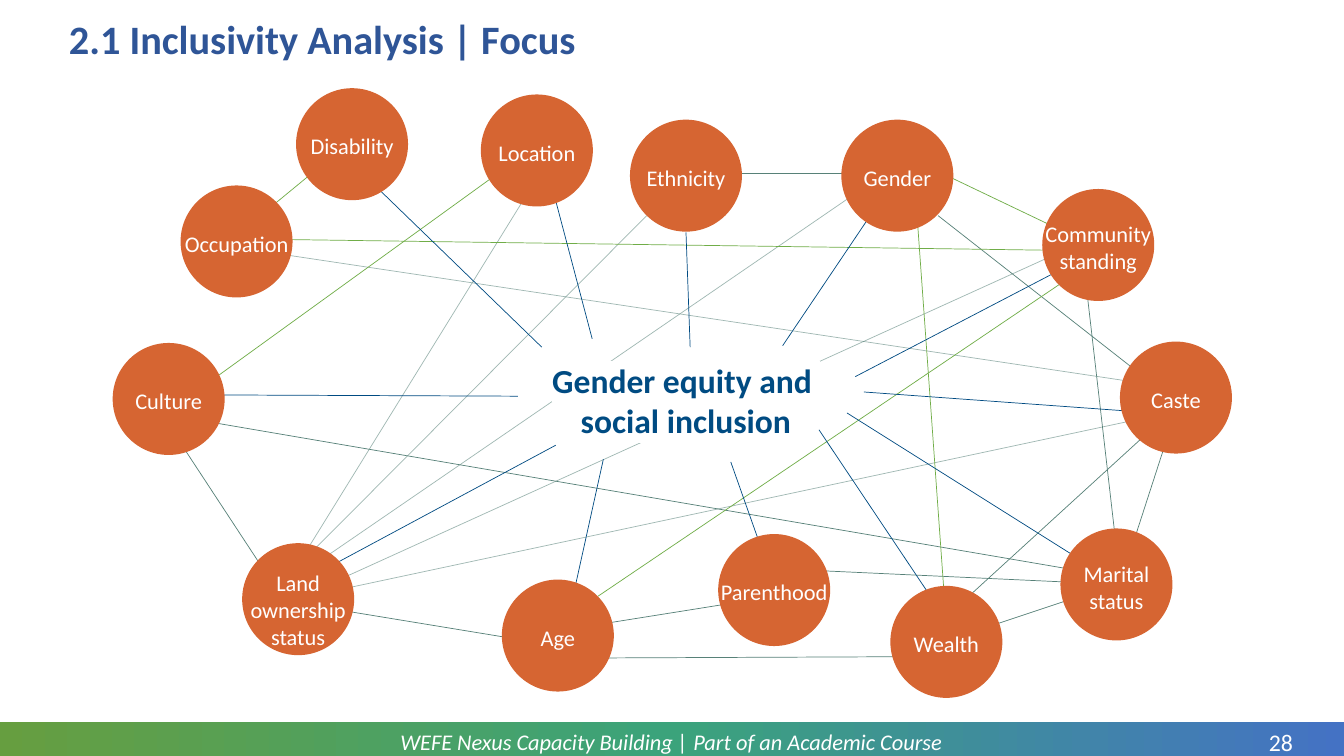
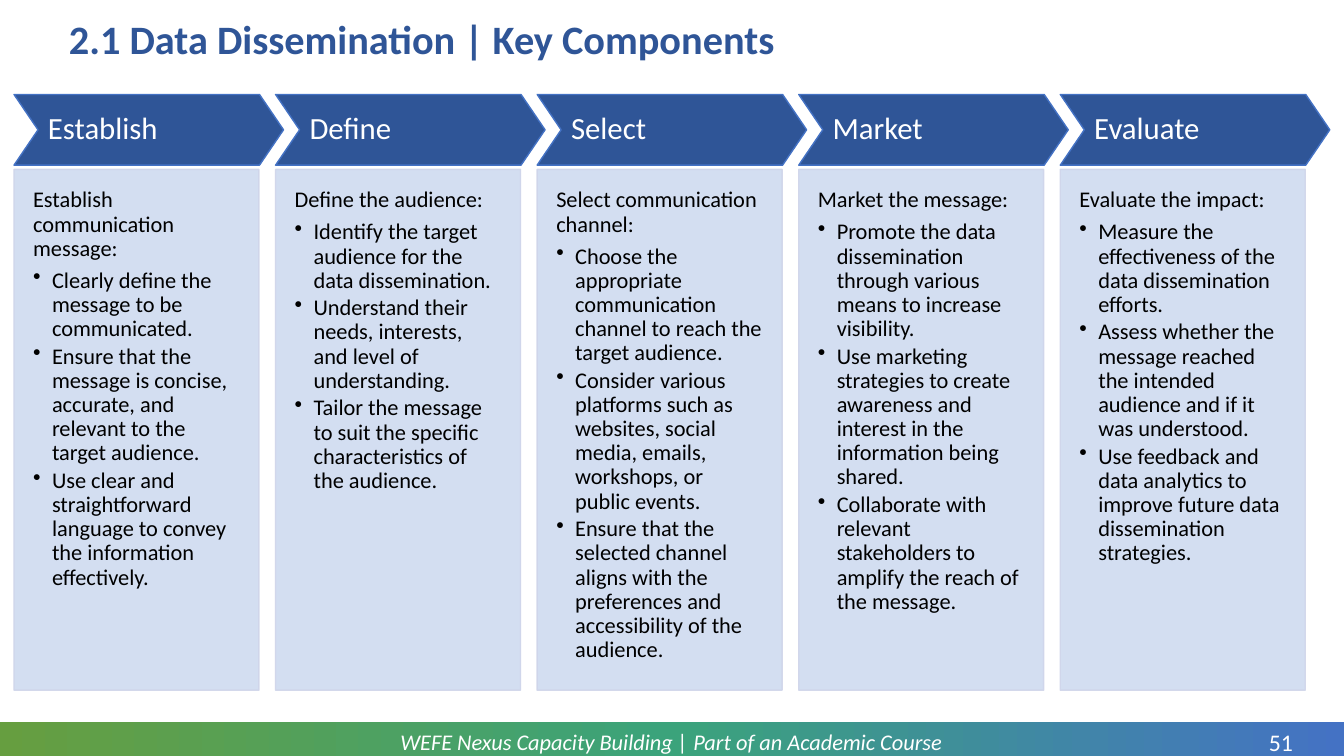
from copy import deepcopy

from lxml.etree import SubElement
from pptx import Presentation
from pptx.dml.color import RGBColor
from pptx.enum.shapes import MSO_CONNECTOR, MSO_SHAPE
from pptx.enum.text import MSO_ANCHOR, MSO_AUTO_SIZE, PP_ALIGN
from pptx.oxml.ns import qn
from pptx.util import Pt

# Shared look
FONT = "Calibri"
WHITE, BLACK = "FFFFFF", "000000"
TITLE_BLUE, LINK_BLUE = "2F5597", "004B82"
GREEN, TEAL, ORANGE = "70AD47", "578178", "D66532"
BAND_STOPS = [(0, "669E40"), (0.5, "3BA37B"), (1, "4472C4")]
FOOTER = "WEFE Nexus Capacity Building | Part of an Academic Course"

# Factor network: name, left, top, lines of label
CIRCLE_SIZE = 80
LABEL_WIDTH = 94
LABEL_OFFSETS = {1: 28, 2: 19, 3: 15}
FACTORS = [
    ("Occupation", 129, 132.5, 1),
    ("Ethnicity", 450, 85.5, 1),
    ("Culture", 80.5, 245, 1),
    ("Land ownership status", 173, 388, 3),
    ("Gender", 601, 85.5, 1),
    ("Community standing", 744.5, 135, 2),
    ("Caste", 800, 244, 1),
    ("Marital status", 757.5, 377.5, 2),
    ("Wealth", 636, 418.5, 1),
    ("Location", 343.5, 67.5, 1),
    ("Parenthood", 513, 381.5, 1),
    ("Age", 358.5, 414, 1),
    ("Disability", 211.5, 63, 1),
]

# Links: colour, opacity in percent, ends as x1, y1, x2, y2
LINKS = [
    (TEAL, 57, [
        (213, 403, 380, 133), (197, 181, 811, 273), (225, 392, 462, 154),
        (238, 416, 751, 183), (225, 403, 623, 130), (234, 423, 825, 297),
    ]),
    (TEAL, 100, [
        (513, 124, 624, 124), (426, 470, 665, 469), (798, 396, 776, 205),
        (811, 383, 834, 312), (836, 284, 670, 154), (193, 414, 126, 312),
        (767, 407, 153, 302), (572, 407, 767, 416), (522, 431, 428, 446),
        (238, 435, 372, 457), (693, 425, 820, 309), (711, 446, 765, 428),
    ]),
    (GREEN, 100, [
        (655, 153, 674, 419), (667, 121, 757, 164), (148, 274, 361, 120),
        (197, 145, 231, 117), (427, 426, 757, 203), (197, 171, 767, 179),
    ]),
    (LINK_BLUE, 100, [
        (605, 295, 772, 400), (811, 294, 617, 280), (559, 247, 625, 149),
        (387, 248, 258, 123), (129, 282, 370, 283), (235, 405, 397, 318),
        (545, 395, 522, 330), (410, 423, 431, 328), (423, 242, 395, 136),
        (585, 307, 666, 428), (611, 269, 755, 194), (493, 248, 490, 166),
    ]),
]

# Process columns: step, lead-in, bullets
COLUMN_LEFT, COLUMN_STEP, COLUMN_WIDTH = 10, 186.84, 175
STEPS = [
    ("Establish", "Establish communication message:", [
        "Clearly define the message to be communicated.",
        "Ensure that the message is concise, accurate, and relevant to the target audience.",
        "Use clear and straightforward language to convey the information effectively.",
    ]),
    ("Define", "Define the audience:", [
        "Identify the target audience for the data dissemination.",
        "Understand their needs, interests, and level of understanding.",
        "Tailor the message to suit the specific characteristics of the audience.",
    ]),
    ("Select", "Select communication channel:", [
        "Choose the appropriate communication channel to reach the target audience.",
        "Consider various platforms such as websites, social media, emails, workshops, or public events.",
        "Ensure that the selected channel aligns with the preferences and accessibility of the audience.",
    ]),
    ("Market", "Market the message:", [
        "Promote the data dissemination through various means to increase visibility.",
        "Use marketing strategies to create awareness and interest in the information being shared.",
        "Collaborate with relevant stakeholders to amplify the reach of the message.",
    ]),
    ("Evaluate", "Evaluate the impact:", [
        "Measure the effectiveness of the data dissemination efforts.",
        "Assess whether the message reached the intended audience and if it was understood.",
        "Use feedback and data analytics to improve future data dissemination strategies.",
    ]),
]


# Helpers
def color(hex_value):
    return RGBColor.from_string(hex_value)


def points(*values):
    return [Pt(value) for value in values]


def set_opacity(shape, percent):
    for color_element in shape._element.spPr.iter(qn("a:srgbClr")):
        SubElement(color_element, qn("a:alpha"), val=str(percent * 1000))


def write_paragraph(paragraph, text, size=16, ink=WHITE, bold=False, italic=False,
                    align=PP_ALIGN.LEFT, line_spacing=1.0, space_after=0,
                    bullet_indent=0, highlight=None):
    paragraph.text = text
    paragraph.alignment = align
    paragraph.line_spacing = line_spacing
    paragraph.space_before = Pt(0)
    paragraph.space_after = Pt(space_after)
    if bullet_indent:
        properties = paragraph._p.get_or_add_pPr()
        properties.set("marL", str(Pt(bullet_indent)))
        properties.set("indent", str(Pt(-bullet_indent)))
        SubElement(properties, qn("a:buChar"), char="•")
    for run in paragraph.runs:
        font = run.font
        font.size, font.bold, font.italic = Pt(size), bold, italic
        font.color.rgb = color(ink)
        if highlight:
            marker = SubElement(run._r.get_or_add_rPr(), qn("a:highlight"))
            SubElement(marker, qn("a:srgbClr"), val=highlight)
        font.name = FONT


def set_frame(frame, anchor=MSO_ANCHOR.TOP, margins=(7.2, 3.6, 7.2, 3.6)):
    frame.word_wrap = True
    frame.auto_size = MSO_AUTO_SIZE.NONE
    frame.vertical_anchor = anchor
    (frame.margin_left, frame.margin_top,
     frame.margin_right, frame.margin_bottom) = points(*margins)


def add_label(slide, text, box, anchor=MSO_ANCHOR.TOP, margins=(7.2, 3.6, 7.2, 3.6), **text_format):
    frame = slide.shapes.add_textbox(*points(*box)).text_frame
    set_frame(frame, anchor, margins)
    write_paragraph(frame.paragraphs[0], text, align=PP_ALIGN.CENTER, **text_format)


def add_block(slide, kind, box, fill, outline=None):
    shape = slide.shapes.add_shape(kind, *points(*box))
    shape.shadow.inherit = False
    shape.fill.solid()
    shape.fill.fore_color.rgb = color(fill)
    if outline:
        shape.line.color.rgb = color(outline)
        shape.line.width = Pt(1)
    else:
        shape.line.fill.background()
    return shape


def add_link(slide, ends, ink, opacity):
    connector = slide.shapes.add_connector(MSO_CONNECTOR.STRAIGHT, *points(*ends))
    connector.line.color.rgb = color(ink)
    connector.line.width = Pt(0.5)
    SubElement(connector._element.spPr, qn("a:effectLst"))
    if opacity < 100:
        set_opacity(connector, opacity)


# Shared slide frame
def add_footer_band(slide):
    band = add_block(slide, MSO_SHAPE.RECTANGLE, (0, 515.5, 960, 24.5), WHITE)
    band.fill.gradient()
    band.fill.gradient_angle = 0
    stop_list = band._element.spPr.find(qn("a:gradFill")).find(qn("a:gsLst"))
    stop_list.append(deepcopy(stop_list[0]))
    for stop, (position, ink) in zip(band.fill.gradient_stops, BAND_STOPS):
        stop.color.rgb = color(ink)
        stop.position = position


def add_framed_slide(presentation, title, number):
    slide = presentation.slides.add_slide(presentation.slide_layouts[5])
    heading = slide.shapes.title
    heading.left, heading.top, heading.width, heading.height = points(42, 9.5, 875, 40)
    set_frame(heading.text_frame, MSO_ANCHOR.MIDDLE)
    write_paragraph(heading.text_frame.paragraphs[0], title, size=28.8,
                    ink=TITLE_BLUE, bold=True, line_spacing=0.9)
    add_footer_band(slide)
    add_label(slide, FOOTER, (66, 517, 827, 26), MSO_ANCHOR.MIDDLE, italic=True)
    add_label(slide, number, (893.5, 520, 43, 21), margins=(0, 0, 0, 0), size=17)
    return slide


# Slide content
def add_factor_network(slide):
    for ink, opacity, links in LINKS:
        for ends in links:
            add_link(slide, ends, ink, opacity)
    for name, left, top, line_count in FACTORS:
        add_block(slide, MSO_SHAPE.OVAL, (left, top, CIRCLE_SIZE, CIRCLE_SIZE), ORANGE)
        label_left = left + (CIRCLE_SIZE - LABEL_WIDTH) / 2
        label_top = top + LABEL_OFFSETS[line_count]
        add_label(slide, name, (label_left, label_top, LABEL_WIDTH, 7.2 + 19.5 * line_count))
    add_label(slide, "Gender equity and \vsocial inclusion", (336, 253.5, 308, 65.5),
              size=24, ink=LINK_BLUE, bold=True, highlight=WHITE)


def add_step_column(slide, left, step, lead_in, bullets):
    chevron = add_block(slide, MSO_SHAPE.CHEVRON, (left, 67.5, 192.5, 50.5), TITLE_BLUE, "4472C4")
    chevron.adjustments[0] = 0.34
    set_frame(chevron.text_frame, MSO_ANCHOR.MIDDLE)
    write_paragraph(chevron.text_frame.paragraphs[0], step, size=22, line_spacing=0.9)

    panel = add_block(slide, MSO_SHAPE.RECTANGLE, (left, 121, COLUMN_WIDTH, 372), "CFDBF0", "CFD5EA")
    set_opacity(panel, 90)
    frame = panel.text_frame
    set_frame(frame, margins=(13.7, 13.7, 13.7, 28))
    write_paragraph(frame.paragraphs[0], lead_in, ink=BLACK, line_spacing=0.9, space_after=5.6)
    for bullet in bullets:
        write_paragraph(frame.add_paragraph(), bullet, ink=BLACK, line_spacing=0.9,
                        space_after=2.4, bullet_indent=13.5)


def main():
    presentation = Presentation()
    presentation.slide_width, presentation.slide_height = points(960, 540)

    slide = add_framed_slide(presentation, "2.1 Inclusivity Analysis | Focus", "28")
    add_factor_network(slide)

    slide = add_framed_slide(presentation, "2.1 Data Dissemination | Key Components", "51")
    for index, (step, lead_in, bullets) in enumerate(STEPS):
        add_step_column(slide, COLUMN_LEFT + index * COLUMN_STEP, step, lead_in, bullets)

    presentation.save("out.pptx")


if __name__ == "__main__":
    main()
